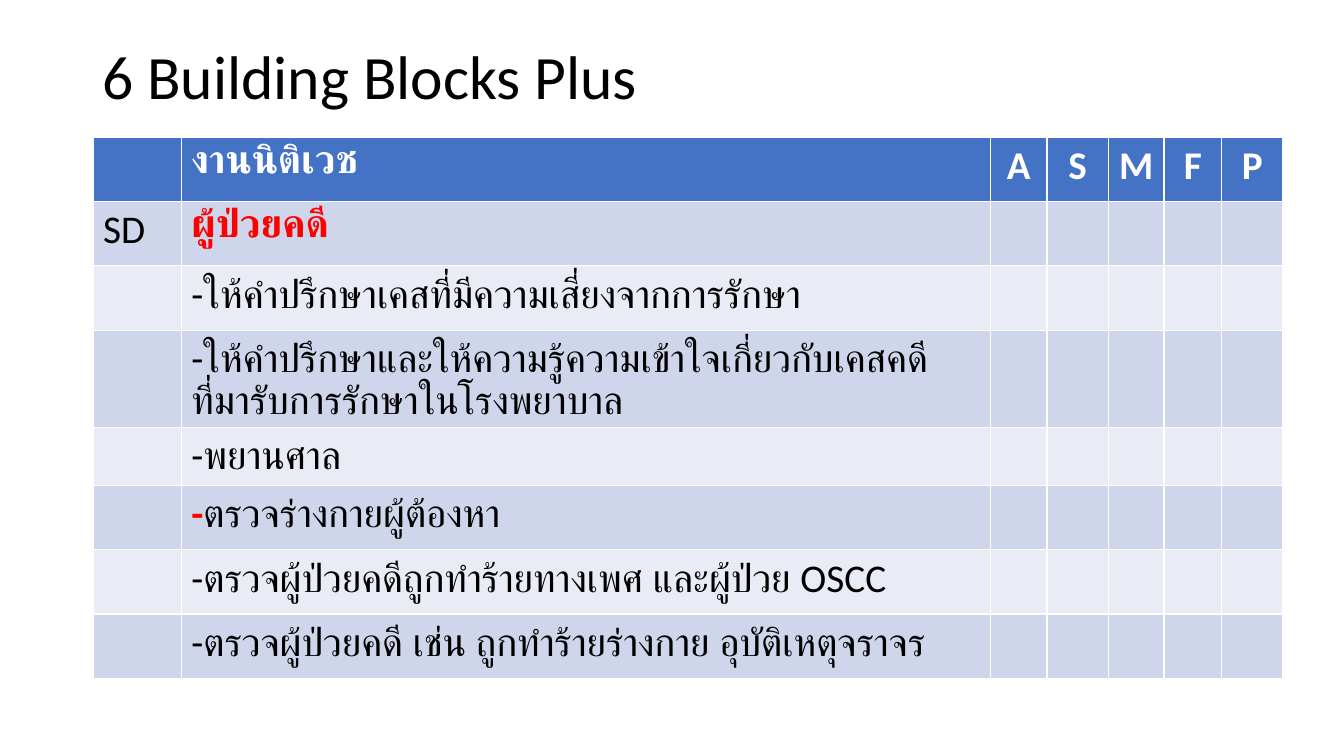
"""Build the 6 Building Blocks Plus slide with its forensic work table."""
import pptx
import pptx.util
import pptx.dml.color
import pptx.enum.lang
import pptx.enum.text

Pt = pptx.util.Pt
Align = pptx.enum.text.PP_ALIGN
Lang = pptx.enum.lang.MSO_LANGUAGE_ID


def paint(fill, code):
    fill.solid()
    fill.fore_color.rgb = pptx.dml.color.RGBColor.from_string(code)


def write(para, text, code, **extra):
    run = para.add_run()
    run.text = text
    form = {"name": "Calibri", "size": Pt(28), "bold": False, **extra}
    for key, value in form.items():
        setattr(run.font, key, value)
    paint(run.font.fill, code)


black, red, white = "000000", "FF0000", "FFFFFF"
blue, dark, light = "4472C4", "CFD5EA", "E9EBF5"

deck = pptx.Presentation()
deck.slide_width, deck.slide_height = Pt(960), Pt(540)
slide = deck.slides.add_slide(deck.slide_layouts[5])

title = slide.shapes.title
place = {"left": Pt(66), "top": Pt(28.8), "width": Pt(828), "height": Pt(55.4)}
for key, value in place.items():
    setattr(title, key, value)
frame = title.text_frame
style = {
    "auto_size": pptx.enum.text.MSO_AUTO_SIZE.NONE,
    "vertical_anchor": pptx.enum.text.MSO_ANCHOR.MIDDLE,
    "word_wrap": True,
}
for key, value in style.items():
    setattr(frame, key, value)
head = frame.paragraphs[0]
head.alignment = Align.LEFT
head.line_spacing = 0.9
write(head, "6 Building Blocks Plus", black, size=Pt(44))

tasks = [
    [("ผู้ป่วยคดี", red)],
    [("-ให้คำปรึกษาเคสที่มีความเสี่ยงจากการรักษา", black)],
    [("-ให้คำปรึกษาและให้ความรู้ความเข้าใจเกี่ยวกับเคสคดีที่มารับการรักษาในโรงพยาบาล", black)],
    [("-พยานศาล", black)],
    [("-", red), ("ตรวจร่างกายผู้ต้องหา", black)],
    [("-ตรวจผู้ป่วยคดีถูกทำร้ายทางเพศ และผู้ป่วย OSCC", black)],
    [("-ตรวจผู้ป่วยคดี เช่น ถูกทำร้ายร่างกาย อุบัติเหตุจราจร", black)],
]
widths = [63.2, 577.8, 40.5, 43.8, 39.8, 41.2, 43.9]
heights = [46, 46, 46, 46, 34, 46, 46, 46]

table = slide.shapes.add_table(
    len(heights), len(widths), Pt(66.4), Pt(97.9), Pt(sum(widths)), Pt(sum(heights))
).table
for col, width in zip(table.columns, widths):
    col.width = Pt(width)
for num, (row, height) in enumerate(zip(table.rows, heights)):
    row.height = Pt(height)
    for cell in row.cells:
        paint(cell.fill, blue if num == 0 else dark if num % 2 else light)

for col, label in enumerate(["งานนิติเวช", *"ASMFP"], 1):
    para = table.cell(0, col).text_frame.paragraphs[0]
    para.alignment = Align.LEFT if col == 1 else Align.CENTER
    write(para, label, white, bold=True)

write(table.cell(1, 0).text_frame.paragraphs[0], "SD", black)
for num, parts in enumerate(tasks, 1):
    para = table.cell(num, 1).text_frame.paragraphs[0]
    for text, code in parts:
        write(para, text, code, bold=code == red, language_id=Lang.THAI)

deck.save("out.pptx")
